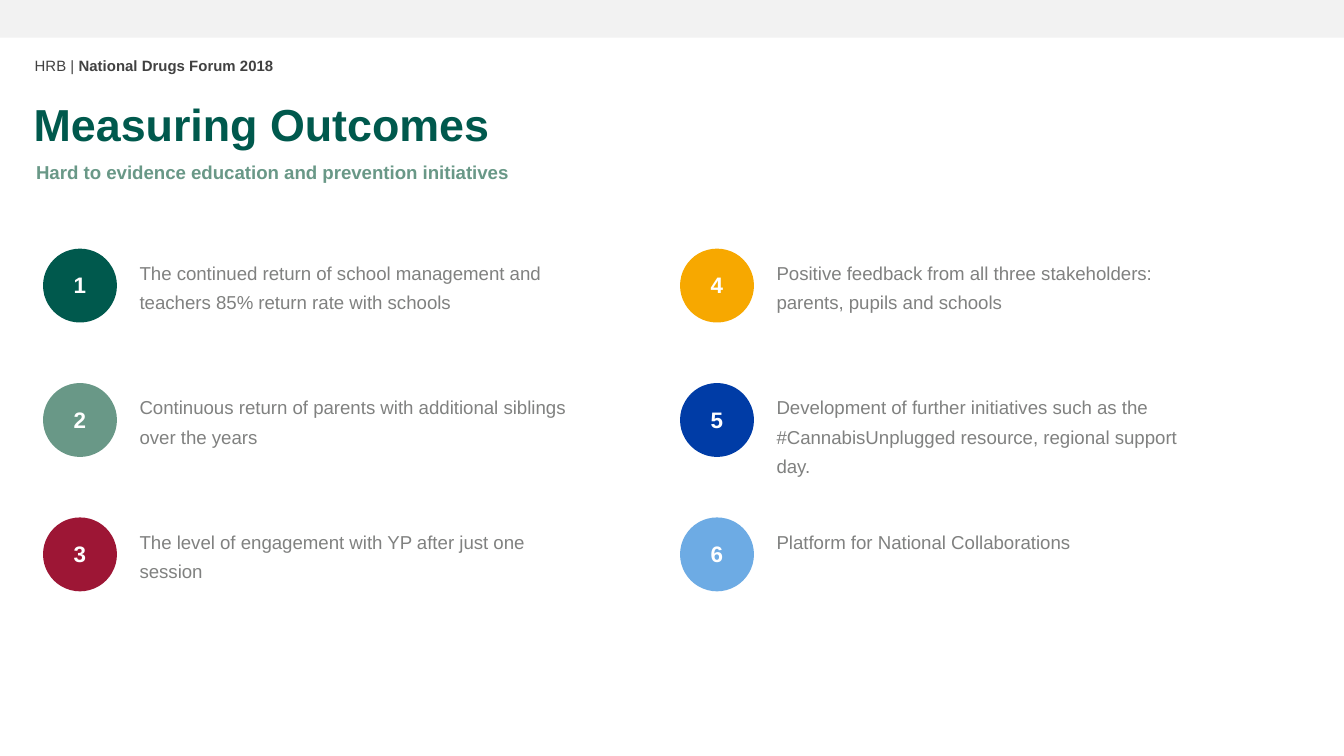
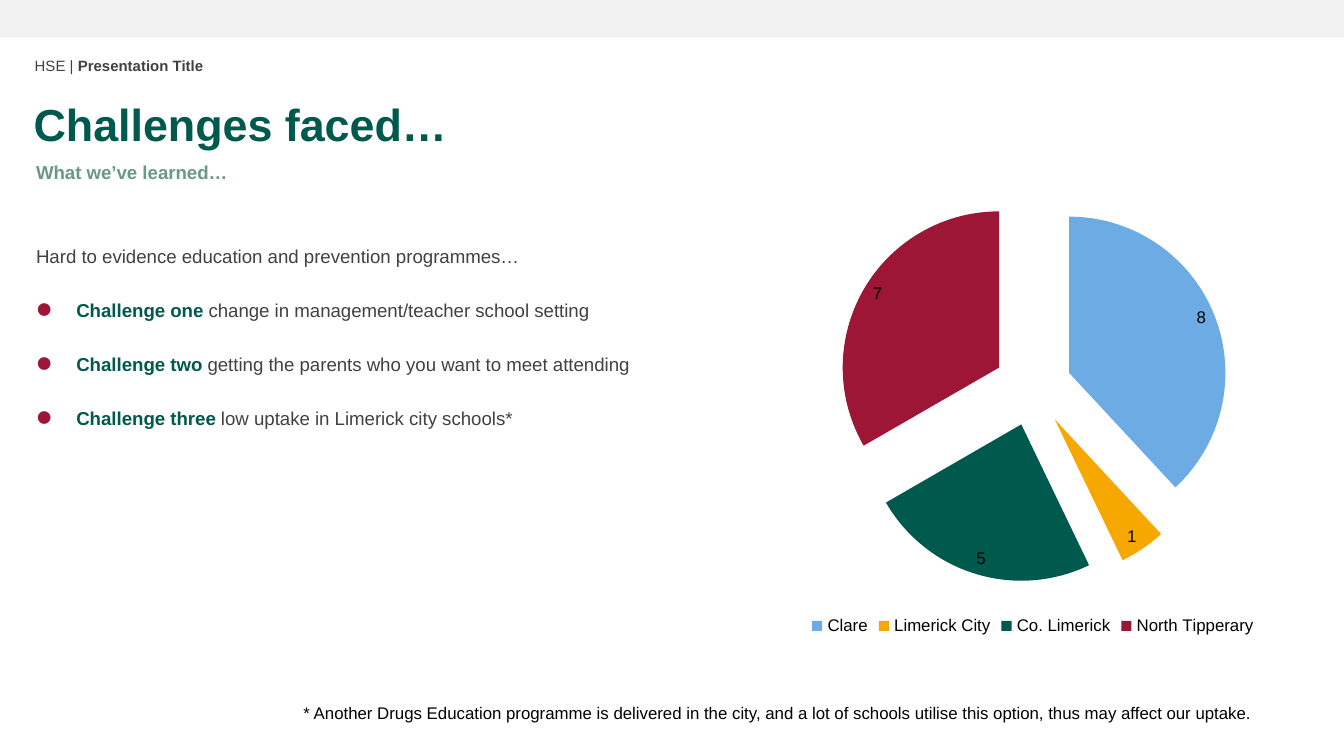
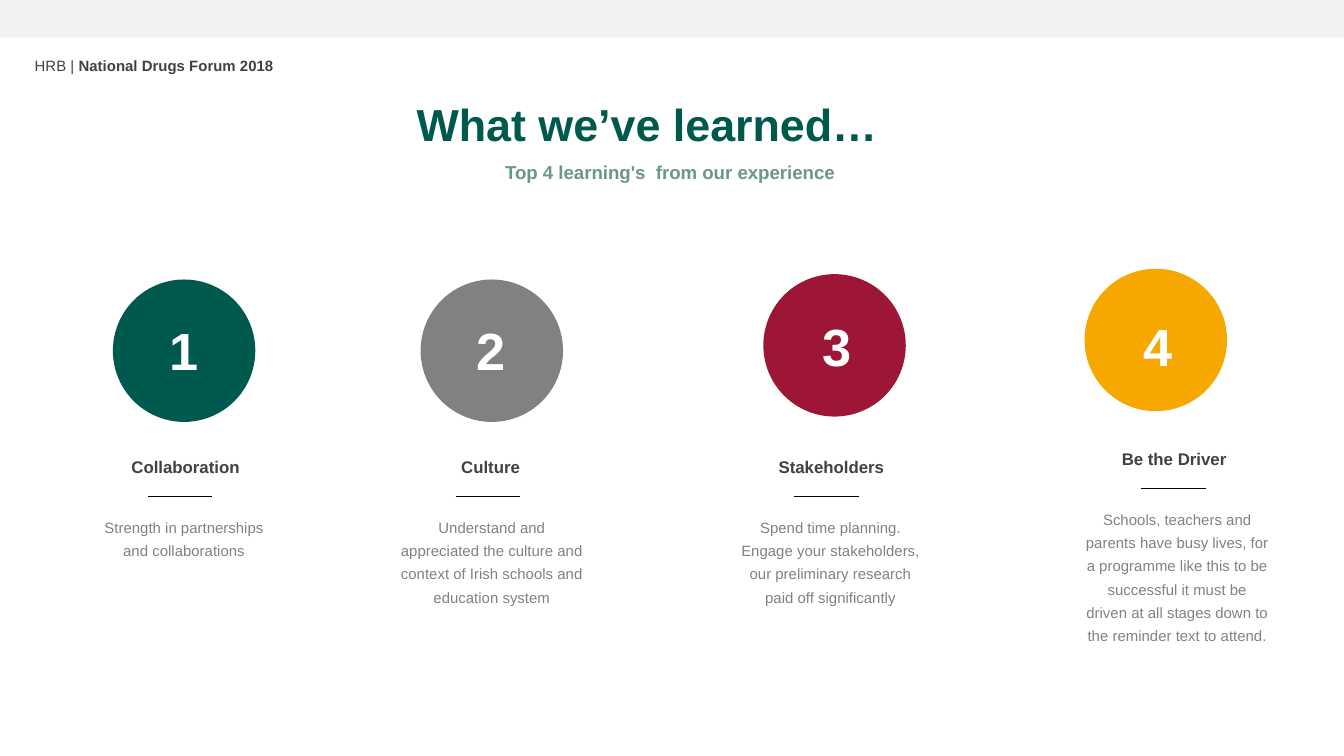
import pptx
import pptx.util
import pptx.chart.data
import pptx.dml.color
import pptx.enum.chart
import pptx.enum.shapes
import pptx.enum.text
import lxml.etree
from pptx.util import Inches, Pt
from pptx.oxml.ns import qn

FONT = "Arial"
GREEN, SAGE, RED, AMBER = "00594D", "699887", "9D1635", "F7A800"
BLUE, SKY, GREY, DARK = "003CA6", "6DABE4", "808180", "414141"
WHITE, BLACK, BAND = "FFFFFF", "000000", "F2F2F2"
LEFT = pptx.enum.text.PP_ALIGN.LEFT
CENTER = pptx.enum.text.PP_ALIGN.CENTER

# Content: header is (organisation, text, width); title and subtitle are (text, left, width)
FORUM = ("HRB", "National Drugs Forum 2018", 2)
OUTCOMES = {
    "header": FORUM,
    "title": ("Measuring Outcomes", 0.15, 3.62),
    "subtitle": ("Hard to evidence education and prevention initiatives", 0.17, 3.75),
    # colour, text, text height
    "items": [
        (GREEN, "The continued return of school management and teachers 85% return rate "
                "with schools", 0.54),
        (SAGE, "Continuous return of parents with additional siblings over the years", 0.54),
        (RED, "The level of engagement with YP after just one session", 0.54),
        (AMBER, "Positive feedback from all three stakeholders: parents, pupils and schools", 0.54),
        (BLUE, "Development of further initiatives such as the #CannabisUnplugged resource, "
               "regional support day.", 0.76),
        (SKY, "Platform for National Collaborations", 0.32),
    ],
}
CHALLENGES = {
    "header": ("HSE", "Presentation Title", 1.48),
    "title": ("Challenges faced…", 0.15, 3.31),
    "subtitle": ("What we’ve learned…", 0.17, 1.64),
    "intro": "Hard to evidence education and prevention programmes…",
    "bullets": [
        ("Challenge one", " change in management/teacher school setting"),
        ("Challenge two", " getting the parents who you want to meet attending"),
        ("Challenge three", " low uptake in Limerick city schools*"),
    ],
    "areas": [("Clare", 8, SKY), ("Limerick City", 1, AMBER),
              ("Co. Limerick", 5, GREEN), ("North Tipperary", 7, RED)],
    "footnote": "* Another Drugs Education programme is delivered in the city, and a lot of "
                "schools utilise this option, thus may affect our uptake.",
}
LEARNINGS = {
    "header": FORUM,
    "title": ("What we’ve learned…", 3, 3.66),
    "subtitle": ("Top 4 learning's  from our experience", 3.66, 2.69),
    # colour, circle, digit, body (left, top), body height, heading (left, width), heading, body
    "columns": [
        (GREEN, (0.84, 2.08), (1.05, 2.32), (0.59, 3.77), 0.45, (0.87, 1.02), "Collaboration",
         "Strength in partnerships and collaborations"),
        (GREY, (3.13, 2.08), (3.33, 2.32), (2.88, 3.77), 0.8, (3.33, 0.64), "Culture",
         "Understand and appreciated the culture and context of Irish schools and education system"),
        (RED, (5.68, 2.04), (5.91, 2.29), (5.4, 3.77), 0.8, (5.69, 0.99), "Stakeholders",
         "Spend time planning. Engage your stakeholders, our preliminary research "
         "paid off significantly"),
        (AMBER, (8.07, 2), (8.3, 2.29), (7.98, 3.71), 1.15, (8.24, 0.99), "Be the Driver",
         "Schools, teachers and parents have busy lives, for a programme like this to be "
         "successful it must be driven at all stages down to the reminder text to attend."),
    ],
}


def rgb(color):
    return pptx.dml.color.RGBColor.from_string(color)


def write(p, text, size=10, color=DARK, bold=False, align=LEFT, spacing=None):
    """Add one formatted run to a paragraph."""
    p.alignment = align
    if spacing:
        p.line_spacing = spacing
    r = p.add_run()
    r.text = text
    r.font.name, r.font.size, r.font.bold = FONT, Pt(size), bold
    r.font.color.rgb = rgb(color)


def frame(sp, wrap):
    tf = sp.text_frame
    tf.word_wrap = wrap
    tf.auto_size = pptx.enum.text.MSO_AUTO_SIZE.SHAPE_TO_FIT_TEXT
    tf.vertical_anchor = pptx.enum.text.MSO_ANCHOR.TOP
    return tf


def add_text(slide, text, x, y, w, h, wrap=True, **fmt):
    sp = slide.shapes.add_textbox(Inches(x), Inches(y), Inches(w), Inches(h))
    write(frame(sp, wrap).paragraphs[0], text, **fmt)
    return sp


def add_filled(slide, kind, x, y, w, h, color):
    sp = slide.shapes.add_shape(kind, Inches(x), Inches(y), Inches(w), Inches(h))
    sp.shadow.inherit = False
    sp.fill.solid()
    sp.fill.fore_color.rgb = rgb(color)
    sp.line.fill.background()
    return sp


def add_circle(slide, x, y, size, color):
    add_filled(slide, pptx.enum.shapes.MSO_SHAPE.OVAL, x, y, size, size, color)


def add_rule(slide, x, y, length):
    line = slide.shapes.add_connector(pptx.enum.shapes.MSO_CONNECTOR.STRAIGHT,
                                      Inches(x), Inches(y), Inches(x + length), Inches(y))
    line.line.color.rgb = rgb(BLACK)
    line.line.width = Pt(0.25)
    lxml.etree.SubElement(line._element.spPr, qn("a:effectLst"))


def add_bullet(p, color, percent, indent):
    pPr = p._p.get_or_add_pPr()
    pPr.set("marL", str(Inches(indent)))
    pPr.set("indent", str(-Inches(indent)))
    clr = lxml.etree.SubElement(pPr, qn("a:buClr"))
    lxml.etree.SubElement(clr, qn("a:srgbClr")).set("val", color)
    lxml.etree.SubElement(pPr, qn("a:buSzPct")).set("val", str(percent * 1000))
    lxml.etree.SubElement(pPr, qn("a:buFont")).set("typeface", FONT)
    lxml.etree.SubElement(pPr, qn("a:buChar")).set("char", "•")


def add_slide(prs, content):
    """Add a slide with the shared header, title and subtitle."""
    slide = prs.slides.add_slide(prs.slide_layouts[5])
    org, name, width = content["header"]
    sp = add_text(slide, org + " | ", 0.16, 0.37, width, 0.24, wrap=False, size=8)
    write(sp.text_frame.paragraphs[0], name, size=8, bold=True)

    text, x, w = content["title"]
    title = slide.shapes.title
    title.left, title.top, title.width, title.height = map(Inches, (x, 0.67, w, 0.5))
    write(frame(title, False).paragraphs[0], text, size=24, color=GREEN, bold=True)

    text, x, w = content["subtitle"]
    add_text(slide, text, x, 1.15, w, 0.27, wrap=False, color=SAGE, bold=True)
    return slide


def add_band(prs, slide):
    """Place the top band on the master, behind everything."""
    band = add_filled(slide, pptx.enum.shapes.MSO_SHAPE.RECTANGLE, 0, 0, 10, 0.28, BAND)
    prs.slide_master.shapes.element.insert(2, band._element)


def build_outcomes(prs):
    slide = add_slide(prs, OUTCOMES)
    add_band(prs, slide)
    for i, (color, text, height) in enumerate(OUTCOMES["items"]):
        col, row = divmod(i, 3)
        x, y = 0.32 + 4.74 * col, 1.85 + row
        add_circle(slide, x, y, 0.55, color)
        add_text(slide, str(i + 1), x + 0.13, y + 0.12, 0.3, 0.3, wrap=False,
                 size=12, color=WHITE, bold=True)
        add_text(slide, text, x + 0.62, y, 3.44, height, color=GREY, spacing=1.3)


def build_challenges(prs):
    slide = add_slide(prs, CHALLENGES)

    # Challenge list
    sp = add_text(slide, CHALLENGES["intro"], 0.17, 1.72, 5.3, 2.14, spacing=1.3)
    for lead, rest in CHALLENGES["bullets"]:
        p = sp.text_frame.add_paragraph()
        p.space_before = Pt(14.5)
        p.line_spacing = 1.2
        add_bullet(p, RED, 250, 0.3)
        write(p, lead, color=GREEN, bold=True)
        write(p, rest)
    add_text(slide, CHALLENGES["footnote"], 2.16, 5.18, 7.84, 0.25, size=9, color=BLACK)

    # Pie of areas
    names, values, colors = zip(*CHALLENGES["areas"])
    data = pptx.chart.data.CategoryChartData()
    data.categories = names
    data.add_series("Series 1", values)
    chart = slide.shapes.add_chart(pptx.enum.chart.XL_CHART_TYPE.PIE, Inches(5.47), Inches(1.29),
                                   Inches(4.43), Inches(3.48), data).chart
    chart.has_title = False
    chart.font.name, chart.font.size = FONT, Pt(9)
    chart.font.color.rgb = rgb(BLACK)
    chart.has_legend = True
    chart.legend.position = pptx.enum.chart.XL_LEGEND_POSITION.BOTTOM
    chart.legend.include_in_layout = False
    plot = chart.plots[0]
    plot.vary_by_categories = True
    series = plot.series[0]
    for i, color in enumerate(colors):
        fill = series.points[i].format.fill
        fill.solid()
        fill.fore_color.rgb = rgb(color)
    labels = series.data_labels
    labels.show_value = True
    labels.position = pptx.enum.chart.XL_LABEL_POSITION.BEST_FIT
    explosion = lxml.etree.Element(qn("c:explosion"))
    explosion.set("val", "25")
    series._element.find(qn("c:dPt")).addprevious(explosion)


def build_learnings(prs):
    slide = add_slide(prs, LEARNINGS)
    for i, column in enumerate(LEARNINGS["columns"], 1):
        color, circle, digit, (x, y), body_h, (head_x, head_w), heading, body = column
        add_circle(slide, *circle, 1.06, color)
        add_text(slide, str(i), *digit, 0.64, 0.57, size=28, color=WHITE, bold=True, align=CENTER)
        add_text(slide, heading, head_x, y - 0.42, head_w, 0.25, wrap=False,
                 size=9, bold=True, align=CENTER)
        add_rule(slide, x + 0.51, y - 0.08, 0.48)
        add_text(slide, body, x, y, 1.56, body_h, size=8, color=GREY, align=CENTER, spacing=1.3)


def main():
    prs = pptx.Presentation()
    prs.slide_width = Inches(10)
    prs.slide_height = prs.slide_width * 9 // 16
    build_outcomes(prs)
    build_challenges(prs)
    build_learnings(prs)
    prs.save("out.pptx")


if __name__ == "__main__":
    main()
